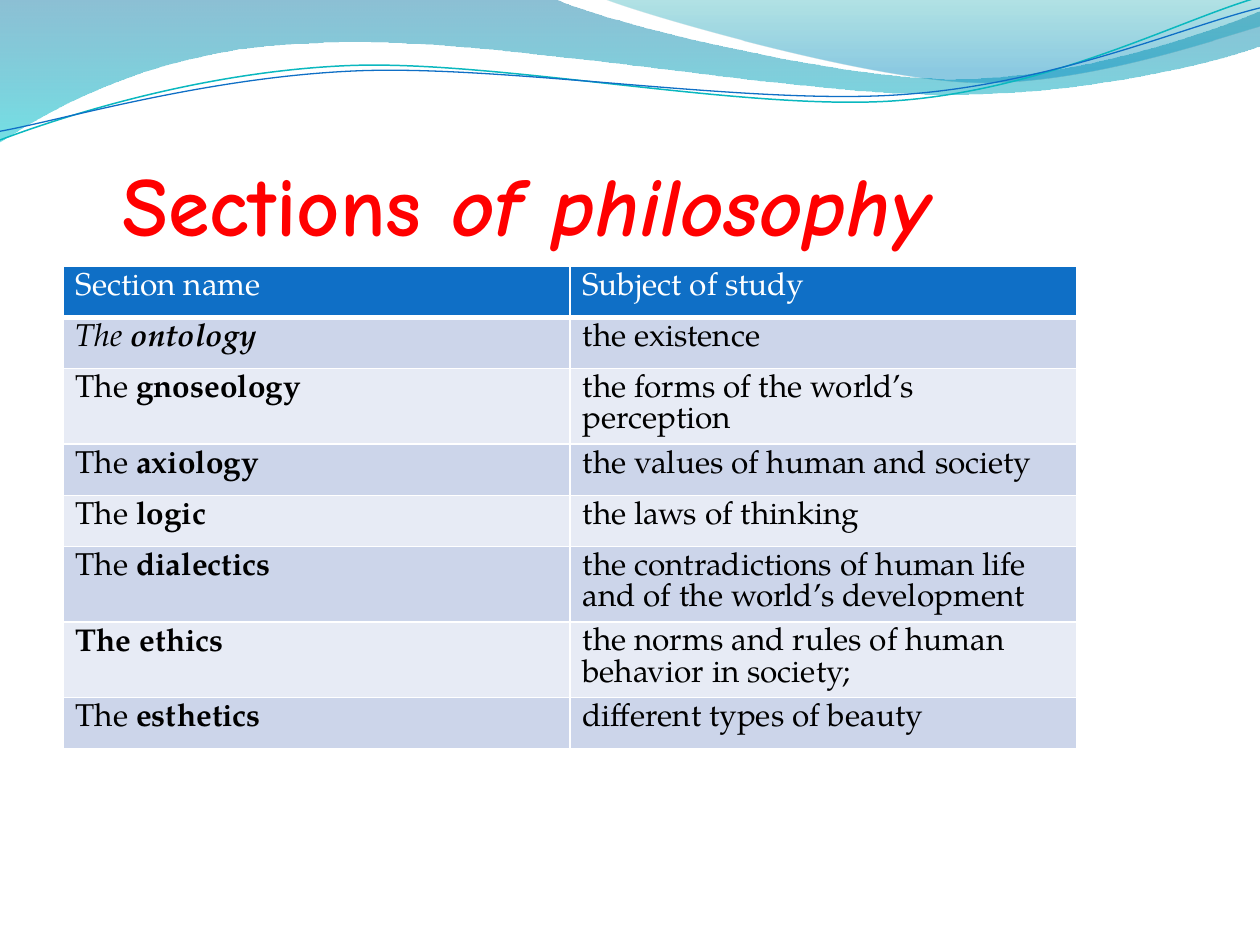
from lxml.etree import SubElement
from pptx import Presentation
from pptx.dml.color import RGBColor
from pptx.enum.text import MSO_ANCHOR
from pptx.oxml.ns import qn
from pptx.util import Pt

COLORS = {
    "white": "FFFFFF", "black": "000000", "title": "FF0000",
    "header": "0F6FC6", "band_dark": "CCD5EA", "band_light": "E7EBF5",
    "wave_blue": "0074A1", "wave_aqua": "00C6CF",
    "crest_aqua": "00A1A9", "crest_blue": "008BBF",
    "line_teal": "0AB8BF", "line_blue": "0F6FC6",
}
UNITS = 100  # outline units per point


def rgb(name):
    return RGBColor.from_string(COLORS[name])


def add_outline(shapes, start, segments, closed):
    """Draw a freeform; a segment holds one point (line) or three (Bezier)."""
    points = [(x * UNITS, y * UNITS)
              for segment in [[start]] + segments for x, y in segment]
    builder = shapes.build_freeform(*points[0], scale=Pt(1) / UNITS)
    builder.add_line_segments(points[1:], close=closed)
    outline = builder.convert_to_shape()
    outline.shadow.inherit = False
    lines = iter(list(outline._element.spPr.iter(qn("a:lnTo"))))
    for segment in segments:
        piece = next(lines)
        if len(segment) == 3:
            curve = piece.makeelement(qn("a:cubicBezTo"))
            piece.addprevious(curve)
            for control in (piece, next(lines), next(lines)):
                curve.append(control[0])
                control.getparent().remove(control)
    return outline


prs = Presentation()
prs.slide_width, prs.slide_height = Pt(720), Pt(540)
slide = prs.slides.add_slide(prs.slide_layouts[6])

# Filled waves: start, segments, gradient stops (position, colour, opacity %)
waves = [
    ((0, 0),
     [[(317, -0.7)],
      [(343, 12), (478, 45), (546, 45)],
      [(614, 45), (690, 19), (720, 6.5)],
      [(721, 26)],
      [(708, 32), (626, 55), (537, 54)],
      [(448, 54), (275, 20), (185, 24.5)],
      [(93, 26), (33, 60), (-0.7, 81.5)]],
     [(0, "wave_blue", 45), (1, "wave_aqua", 55)]),
    ((345, -0.7),
     [[(366, 8), (491, 44.5), (554, 47)],
      [(616, 49.5), (692, 23), (720, 15)],
      [(720, 0)]],
     [(0, "crest_aqua", 30), (0.8, "crest_blue", 45)]),
]
for start, segments, stops in waves:
    wave = add_outline(slide.shapes, start, segments, True)
    wave.line.fill.background()
    wave.fill.gradient()
    wave.fill.gradient_angle = 270
    for stop, (position, color, _) in zip(wave.fill.gradient_stops, stops):
        stop.position = position
        stop.color.rgb = rgb(color)
    stop_colors = wave._element.spPr.iter(qn("a:srgbClr"))
    for stop_color, (_, _, opacity) in zip(stop_colors, stops):
        SubElement(stop_color, qn("a:alpha"), val=str(opacity * 1000))

# Thin lines along the waves
ripples = [
    ((0, 80),
     [[(34.5, 67), (114, 41), (199, 37.5)],
      [(284, 34), (427, 64), (513, 57.5)],
      [(600, 51), (675, 11), (719, -1.5)]], "line_teal", 0.85),
    ((0, 75),
     [[(34, 69), (118, 44), (204, 40.5)],
      [(290, 37), (430, 60.5), (516, 54)],
      [(602, 48), (677, 15), (720, 4.5)]], "line_blue", 0.75),
]
for start, segments, color, width in ripples:
    ripple = add_outline(slide.shapes, start, segments, False)
    ripple.fill.background()
    ripple.line.color.rgb = rgb(color)
    ripple.line.width = Pt(width)

# Title
title = slide.shapes.add_textbox(Pt(36), Pt(55), Pt(648), Pt(90)).text_frame
title.word_wrap = True
title.vertical_anchor = MSO_ANCHOR.BOTTOM
title.margin_left, title.margin_top = Pt(34), Pt(3.6)
title.margin_right = title.margin_bottom = 0
for words, italic in [("Sections ", False), ("of philosophy", True)]:
    run = title.paragraphs[0].add_run()
    run.text = words
    run.font.name, run.font.size = "Comic Neue", Pt(48)
    run.font.bold, run.font.italic = True, italic
    run.font.color.rgb = rgb("title")

# Table: lead-in, bold term, subject of study
sections = [
    ("Section name", "", "Subject of study"),
    ("The ", "ontology", "the existence"),
    ("The ", "gnoseology", "the forms of the world’s perception"),
    ("The ", "axiology", "the values of human and society"),
    ("The ", "logic", "the laws of thinking"),
    ("The ", "dialectics",
     "the contradictions of human life and of the world’s development"),
    ("", "The ethics", "the norms and rules of human behavior in society;"),
    ("The ", "esthetics", "different types of beauty"),
]
row_height = 29.2
table = slide.shapes.add_table(
    len(sections), 2, Pt(36), Pt(152.2), Pt(579.2),
    Pt(row_height * len(sections))).table
for row, (lead, term, subject) in enumerate(sections):
    table.rows[row].height = Pt(row_height)
    fill = "header" if row == 0 else "band_dark" if row % 2 else "band_light"
    for column, parts in enumerate([[(lead, False), (term, True)],
                                    [(subject, False)]]):
        cell = table.cell(row, column)
        paragraph = cell.text_frame.paragraphs[0]
        paragraph.line_spacing = Pt(18)
        for words, bold in parts:
            if not words:
                continue
            run = paragraph.add_run()
            run.text = words
            run.font.name, run.font.size = "TeX Gyre Pagella", Pt(18)
            run.font.bold = bold
            run.font.italic = row == 1 and column == 0
            run.font.color.rgb = rgb("black" if row else "white")
        borders = cell._tc.get_or_add_tcPr()
        for side in ("lnL", "lnR", "lnT", "lnB"):
            thick = (row, side) in [(0, "lnB"), (1, "lnT")]
            border = SubElement(borders, qn(f"a:{side}"),
                                w=str(Pt(3 if thick else 1)))
            border_fill = SubElement(border, qn("a:solidFill"))
            SubElement(border_fill, qn("a:srgbClr"), val=COLORS["white"])
        cell.fill.solid()
        cell.fill.fore_color.rgb = rgb(fill)

prs.save("out.pptx")
